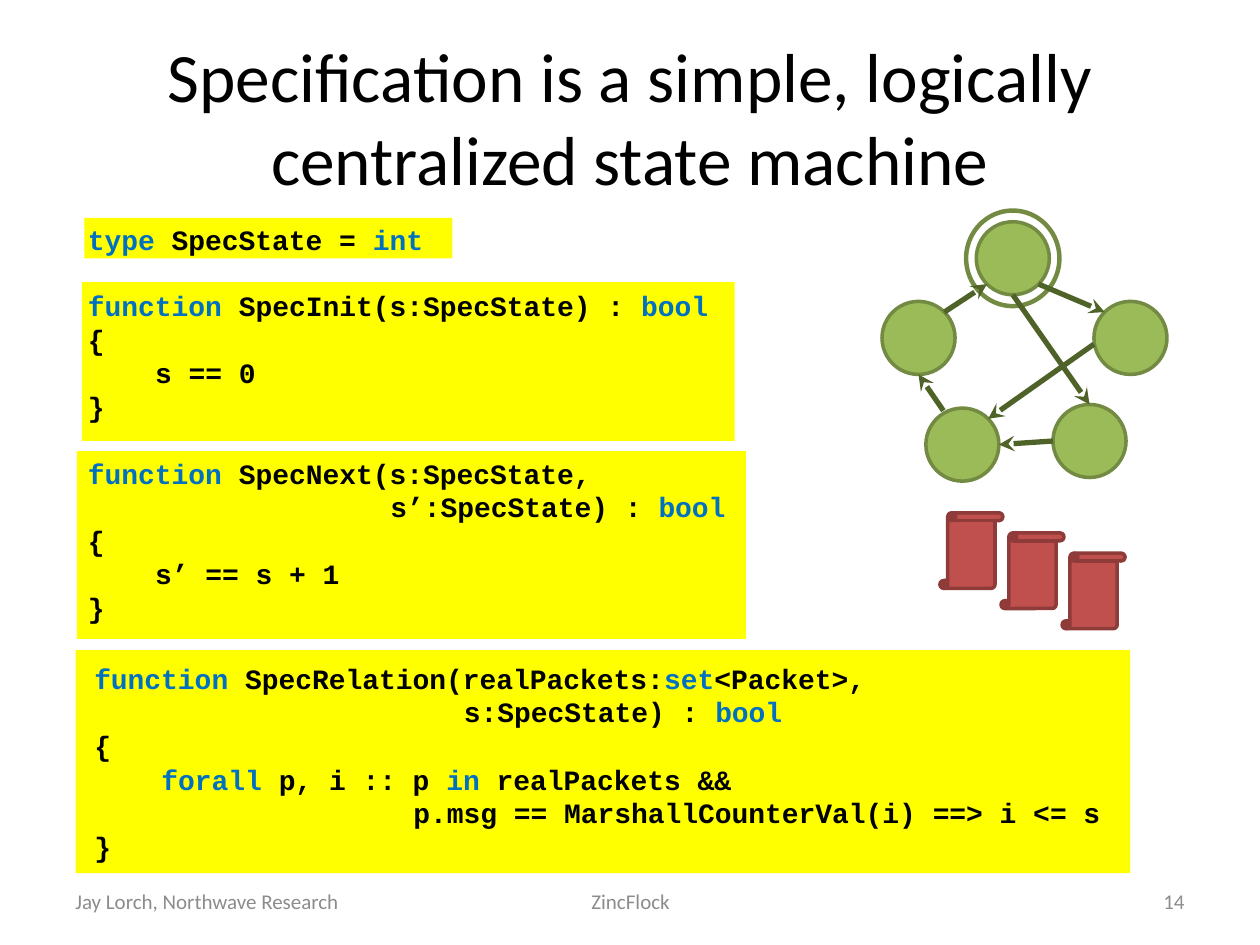
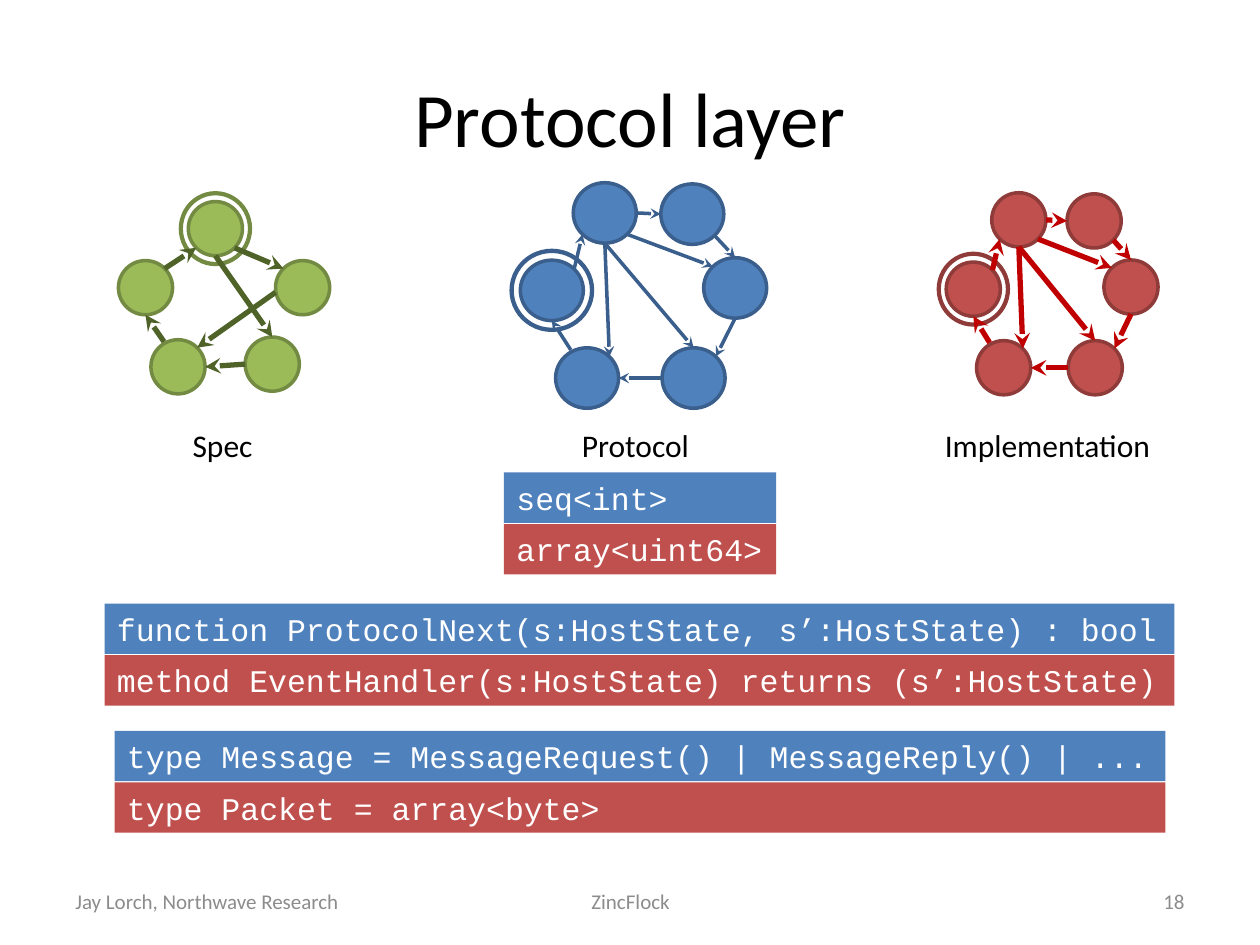
from dataclasses import dataclass
from math import sqrt

from lxml.etree import SubElement
from pptx import Presentation
from pptx.dml.color import RGBColor
from pptx.enum.shapes import MSO_CONNECTOR, MSO_SHAPE
from pptx.enum.text import MSO_ANCHOR, MSO_AUTO_SIZE, PP_ALIGN
from pptx.oxml.ns import qn
from pptx.util import Inches, Pt

BLACK = RGBColor(0x00, 0x00, 0x00)
WHITE = RGBColor(0xFF, 0xFF, 0xFF)
GREY = RGBColor(0x8C, 0x8C, 0x8C)
YELLOW = RGBColor(0xFF, 0xFF, 0x00)
KEYWORD_BLUE = RGBColor(0x00, 0x70, 0xC0)
GREEN = RGBColor(0x9B, 0xBB, 0x59)
GREEN_EDGE = RGBColor(0x73, 0x8A, 0x42)
DARK_GREEN = RGBColor(0x4F, 0x62, 0x28)
RED = RGBColor(0xC0, 0x50, 0x4D)
RED_EDGE = RGBColor(0x8E, 0x3B, 0x39)
DARK_RED = RGBColor(0xC0, 0x00, 0x00)
BLUE = RGBColor(0x4F, 0x81, 0xBD)
BLUE_EDGE = RGBColor(0x3A, 0x5F, 0x8C)

BODY_FONT = "Calibri"
CODE_FONT = "Courier New"
CODE_SIZE = 16
CODE_COLUMN = Pt(CODE_SIZE * 0.6)
COLUMNS, ROWS = 100, 75
CELL = Inches(0.1)
TITLE_ONLY = 5

DIAGONAL = sqrt(0.5)
SITES = {
    "top": (0, -1),
    "bottom": (0, 1),
    "left": (-1, 0),
    "right": (1, 0),
    "inner": (-1, 0.17),
    "crown": (-0.52, -0.93),
    "top left": (-DIAGONAL, -DIAGONAL),
    "top right": (DIAGONAL, -DIAGONAL),
    "bottom left": (-DIAGONAL, DIAGONAL),
    "bottom right": (DIAGONAL, DIAGONAL),
}


@dataclass
class Machine:
    nodes: dict
    initial: str
    edges: list


@dataclass
class Palette:
    fill: RGBColor
    outline: RGBColor
    arrow: RGBColor
    arrow_width: float


SPEC = Machine(
    nodes={"west": (0.5, 1.59), "east": (3.4, 1.59), "southwest": (1.1, 3.05),
           "north": (1.79, 0.5), "southeast": (2.84, 3)},
    initial="north",
    edges=[
        ("west", "top right", "north", "bottom left"),
        ("north", "bottom right", "east", "top left"),
        ("north", "bottom", "southeast", "top"),
        ("east", "inner", "southwest", "top right"),
        ("southeast", "left", "southwest", "right"),
        ("southwest", "crown", "west", "bottom"),
    ],
)
HOSTS = Machine(
    nodes={"west": (0.5, 1.78), "east": (3.41, 1.74), "southwest": (1.06, 3.23),
           "north": (1.34, 0.5), "southeast": (2.75, 3.23), "northeast": (2.73, 0.52)},
    initial="west",
    edges=[
        ("west", "top right", "north", "bottom left"),
        ("north", "bottom right", "east", "top left"),
        ("north", "bottom", "southeast", "top"),
        ("north", "bottom", "southwest", "top right"),
        ("southeast", "left", "southwest", "right"),
        ("southwest", "crown", "west", "bottom"),
        ("north", "right", "northeast", "left"),
        ("northeast", "bottom right", "east", "top"),
        ("east", "bottom", "southeast", "top right"),
    ],
)
SPEC_GREEN = Palette(GREEN, GREEN_EDGE, DARK_GREEN, 3)
PROTOCOL_BLUE = Palette(BLUE, BLUE_EDGE, BLUE_EDGE, 2)
CODE_RED = Palette(RED, RED_EDGE, DARK_RED, 3)


def cells(*counts):
    return [round(count * CELL) for count in counts]


def add_run(paragraph, text, size, color, font=BODY_FONT, bold=False):
    run = paragraph.add_run()
    run.text = text
    run.font.name = font
    run.font.size = Pt(size)
    run.font.bold = bold
    run.font.color.rgb = color


def add_shape(container, preset, box, fill, outline=None):
    shape = container.add_shape(preset, *cells(*box))
    shape.shadow.inherit = False
    shape.fill.solid()
    shape.fill.fore_color.rgb = fill
    if outline is None:
        shape.line.fill.background()
    else:
        shape.line.color.rgb = outline
        shape.line.width = Pt(2)
    return shape


def add_arrow(container, start, end, color, width):
    arrow = container.add_connector(MSO_CONNECTOR.STRAIGHT, *cells(*start, *end))
    arrow.line.color.rgb = color
    arrow.line.width = Pt(width)
    properties = arrow._element.spPr
    SubElement(properties.find(qn("a:ln")), qn("a:tailEnd"), type="stealth")
    SubElement(properties, qn("a:effectLst"))


def add_text(slide, box, text, size, color, align, wrap=True, anchor=MSO_ANCHOR.TOP):
    frame = slide.shapes.add_textbox(*cells(*box)).text_frame
    frame.word_wrap = wrap
    frame.vertical_anchor = anchor
    paragraph = frame.paragraphs[0]
    paragraph.alignment = align
    add_run(paragraph, text, size, color)


def add_titled_slide(presentation, title, size, number):
    slide = presentation.slides.add_slide(presentation.slide_layouts[TITLE_ONLY])
    placeholder = slide.shapes.title
    placeholder.left, placeholder.top, placeholder.width, placeholder.height = cells(5, 3, 90, 12.5)
    frame = placeholder.text_frame
    frame.auto_size = MSO_AUTO_SIZE.NONE
    frame.word_wrap = True
    frame.vertical_anchor = MSO_ANCHOR.MIDDLE
    paragraph = frame.paragraphs[0]
    paragraph.alignment = PP_ALIGN.CENTER
    add_run(paragraph, title, size, BLACK)
    footers = [
        (5, 23.3, "Jay Lorch, Northwave Research", PP_ALIGN.LEFT),
        (34.2, 31.7, "ZincFlock", PP_ALIGN.CENTER),
        (71.7, 23.3, str(number), PP_ALIGN.RIGHT),
    ]
    for left, width, text, align in footers:
        add_text(slide, (left, 69.5, width, 4), text, 12, GREY, align, anchor=MSO_ANCHOR.MIDDLE)
    return slide


def add_code_block(slide, panel, text_box, lines):
    add_shape(slide.shapes, MSO_SHAPE.RECTANGLE, panel, YELLOW)
    frame = slide.shapes.add_textbox(*cells(*text_box)).text_frame
    frame.word_wrap = True
    for index, (indent, line) in enumerate(lines):
        paragraph = frame.add_paragraph() if index else frame.paragraphs[0]
        properties = paragraph._p.get_or_add_pPr()
        properties.set("marL", str(indent * CODE_COLUMN))
        properties.set("indent", "0")
        for position, part in enumerate(line.split("|")):
            if part:
                color = KEYWORD_BLUE if position % 2 else BLACK
                add_run(paragraph, part, CODE_SIZE, color, CODE_FONT, True)


def add_machine(slide, machine, origin, node_size, palette):
    left, top = origin
    width, height = node_size
    group = slide.shapes.add_group_shape().shapes

    def centre(name):
        column, row = machine.nodes[name]
        return left + column * width, top + row * height

    def add_round(preset, name, wide, high):
        x, y = centre(name)
        box = (x - wide / 2, y - high / 2, wide, high)
        return add_shape(group, preset, box, palette.fill, palette.outline)

    def site(name, side):
        x, y = centre(name)
        across, down = SITES[side]
        return x + across * width / 2, y + down * height / 2

    for name in machine.nodes:
        add_round(MSO_SHAPE.OVAL, name, width, height)
    ring = add_round(MSO_SHAPE.DONUT, machine.initial, width * 1.29, height * 1.32)
    ring.adjustments[0] = 0.01
    for source, source_side, target, target_side in machine.edges:
        add_arrow(group, site(source, source_side), site(target, target_side),
                  palette.arrow, palette.arrow_width)


def add_scrolls(slide):
    group = slide.shapes.add_group_shape().shapes
    for step in range(3):
        box = (74.6 + 4.85 * step, 40.7 + 1.6 * step, 5, 6)
        add_shape(group, MSO_SHAPE.VERTICAL_SCROLL, box, RED, RED_EDGE)


def add_code_pair(slide, left, top, width, protocol_code, implementation_code):
    for index, (text, fill) in enumerate([(protocol_code, BLUE), (implementation_code, RED)]):
        box = (left, top + 4.1 * index, width, 4)
        frame = add_shape(slide.shapes, MSO_SHAPE.RECTANGLE, box, fill).text_frame
        frame.word_wrap = True
        frame.vertical_anchor = MSO_ANCHOR.TOP
        paragraph = frame.paragraphs[0]
        paragraph.alignment = PP_ALIGN.LEFT
        add_run(paragraph, text, 18, WHITE, CODE_FONT)


def build_specification(presentation):
    slide = add_titled_slide(
        presentation, "Specification is a simple, logically centralized state machine", 39.6, 14)
    add_code_block(slide, (6, 51.6, 83.7, 17.7), (6.5, 52, 83, 17.2), [
        (0, "|function |SpecRelation(realPackets:|set|<Packet>,"),
        (22, "s:SpecState) : |bool"),
        (0, "{"),
        (4, "|forall |p, i :: p |in |realPackets &&"),
        (19, "p.msg == MarshallCounterVal(i) ==> i <= s"),
        (0, "}"),
    ])
    add_code_block(slide, (6.1, 35.8, 53.1, 14.9), (6, 35.7, 53.3, 14.5), [
        (0, "|function |SpecNext(s:SpecState,"),
        (18, "s’:SpecState) : |bool"),
        (0, "{"),
        (4, "s’ == s + 1"),
        (0, "}"),
    ])
    add_code_block(slide, (6.5, 22.4, 51.8, 12.6), (6, 22.4, 52, 11.8), [
        (0, "|function |SpecInit(s:SpecState) : |bool"),
        (0, "{"),
        (4, "s == 0"),
        (0, "}"),
    ])
    add_code_block(slide, (6.7, 17.3, 29.2, 3.2), (6, 17.2, 29, 3.7),
                   [(0, "|type |SpecState = |int")])
    add_machine(slide, SPEC, (70, 17.6), (5.8, 5.8), SPEC_GREEN)
    add_scrolls(slide)


def build_protocol_layer(presentation):
    slide = add_titled_slide(presentation, "Protocol layer", 44, 18)
    add_machine(slide, SPEC, (9.4, 16), (4.3, 4.3), SPEC_GREEN)
    add_machine(slide, HOSTS, (75.1, 15.3), (4.3, 4.3), CODE_RED)
    add_machine(slide, HOSTS, (41.3, 14.5), (5, 4.8), PROTOCOL_BLUE)
    for left, width, name in [(14.3, 6.8, "Spec"), (45.2, 10.6, "Protocol"),
                              (74, 18.5, "Implementation")]:
        add_text(slide, (left, 33.3, width, 4), name, 18, BLACK, PP_ALIGN.LEFT, wrap=False)
    add_code_pair(slide, 40, 37.5, 21.6, "seq<int>", "array<uint64>")
    add_code_pair(slide, 8.3, 47.9, 84.9,
                  "function ProtocolNext(s:HostState, s’:HostState) : bool",
                  "method EventHandler(s:HostState) returns (s’:HostState)")
    add_code_pair(slide, 9.1, 58, 83.4,
                  "type Message = MessageRequest() | MessageReply() | ...",
                  "type Packet = array<byte>")


def main():
    presentation = Presentation()
    presentation.slide_width, presentation.slide_height = cells(COLUMNS, ROWS)
    build_specification(presentation)
    build_protocol_layer(presentation)
    presentation.save("out.pptx")


if __name__ == "__main__":
    main()
